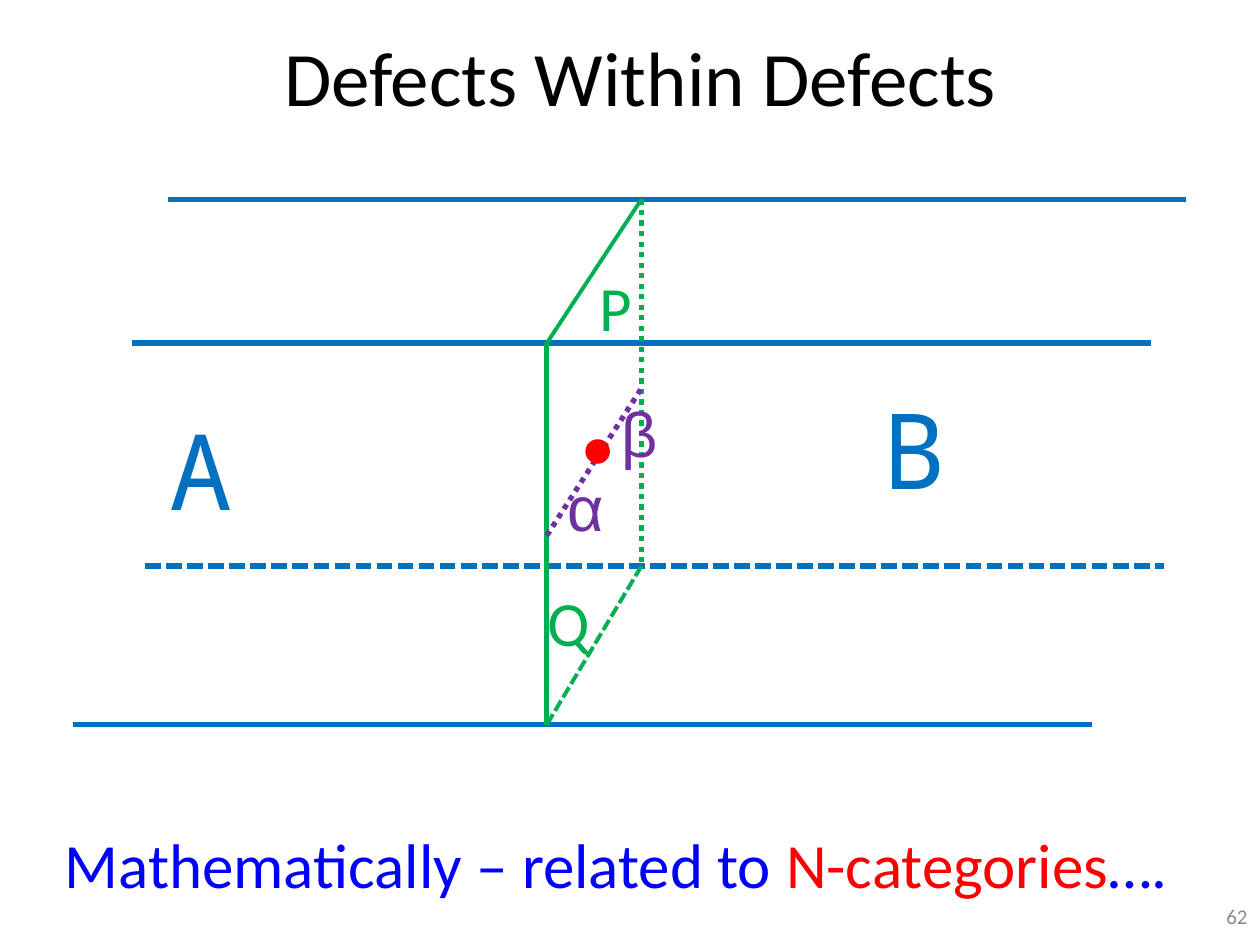
from dataclasses import dataclass

from pptx import Presentation
from pptx.dml.color import RGBColor
from pptx.enum.dml import MSO_LINE_DASH_STYLE as DASH
from pptx.enum.shapes import MSO_CONNECTOR, MSO_SHAPE
from pptx.enum.text import MSO_ANCHOR, PP_ALIGN
from pptx.oxml.ns import qn
from pptx.util import Pt


@dataclass(frozen=True)
class Theme:
    black: str = "000000"
    gray: str = "8C8C8C"
    sheet: str = "0070C0"
    wall: str = "00B050"
    seam: str = "7030A0"
    accent: str = "FF0000"
    note: str = "0000FF"
    title_size: int = 44
    region_size: int = 60
    label_size: int = 36
    number_size: int = 12
    font: str = "Calibri"
    greek_font: str = "Arial"
    region_font: str = "Noto Sans Mono"


T = Theme()


def write(sp, runs, size, font=T.font, align=PP_ALIGN.LEFT, anchor=MSO_ANCHOR.TOP):
    """Fill a shape with one paragraph of (text, colour) runs."""
    tf = sp.text_frame
    tf.word_wrap = True
    tf.vertical_anchor = anchor
    p = tf.paragraphs[0]
    p.alignment = align
    for text, color in runs:
        r = p.add_run()
        r.text = text
        r.font.size = Pt(size)
        r.font.name = font
        r.font.color.rgb = RGBColor.from_string(color)


def draw_line(start, end, color, width=3, dash=None):
    points = [Pt(v) for v in (*start, *end)]
    line = s.shapes.add_connector(MSO_CONNECTOR.STRAIGHT, *points)
    line.line.color.rgb = RGBColor.from_string(color)
    line.line.width = Pt(width)
    if dash:
        line.line.dash_style = dash
    sp_pr = line._element.spPr
    sp_pr.append(sp_pr.makeelement(qn("a:effectLst"), {}))


prs = Presentation()
prs.slide_width, prs.slide_height = Pt(720), Pt(540)
s = prs.slides.add_slide(prs.slide_layouts[5])

# Title
title = s.shapes.title
title.left, title.top, title.width, title.height = Pt(42), Pt(-1.5), Pt(648), Pt(90)
write(title, [("Defects Within Defects", T.black)], T.title_size,
      align=PP_ALIGN.CENTER, anchor=MSO_ANCHOR.MIDDLE)

# Corners of the wall between regions A and B
front_x, back_x = 312.5, 366.5
back_top, front_top, back_bottom, front_bottom = 114, 196, 323.5, 414

# Horizontal edges of the two sheets
edge_length = 582
for left, y, dash in [
    (96, back_top, None),
    (42, front_bottom, None),
    (75.5, front_top, None),
    (83, back_bottom, DASH.SQUARE_DOT),
]:
    draw_line((left, y), (left + edge_length, y), T.sheet, dash=dash)
# Pattern names: ROUND_DOT is sysDot, SQUARE_DOT is sysDash

# Wall outline
draw_line((back_x, back_top), (front_x, front_top), T.wall, 2.25)
draw_line((front_x, front_top), (front_x, front_bottom), T.wall)
draw_line((back_x, back_top), (back_x, back_bottom), T.wall, dash=DASH.ROUND_DOT)
draw_line((back_x, back_bottom), (front_x, front_bottom), T.wall, 2.25, DASH.SQUARE_DOT)

# Seam inside the wall, with its point defect
draw_line((front_x, 306), (back_x, 222), T.seam, dash=DASH.ROUND_DOT)
dot = s.shapes.add_shape(MSO_SHAPE.OVAL, Pt(335.5), Pt(252), Pt(12), Pt(12))
dot.shadow.inherit = False
dot.fill.solid()
dot.fill.fore_color.rgb = RGBColor.from_string(T.accent)
dot.line.color.rgb = RGBColor.from_string(T.accent)
dot.line.width = Pt(2)

# Labels and closing remark
remark = [("Mathematically – related to ", T.note), ("N-categories", T.accent),
          ("….", T.note)]
for runs, left, top, width, height, size, font in [
    ([("P", T.wall)], 335.5, 150, 132, 51, T.label_size, T.font),
    ([("Q", T.wall)], 306, 330, 144, 51, T.label_size, T.font),
    ([("α", T.seam)], 317.5, 264, 102, 51, T.label_size, T.greek_font),
    ([("β", T.seam)], 348, 222, 132, 51, T.label_size, T.greek_font),
    ([("A", T.sheet)], 90, 228, 114, 80, T.region_size, T.region_font),
    ([("B", T.sheet)], 497.5, 216, 138, 80, T.region_size, T.region_font),
    (remark, 30, 468, 654, 51, T.label_size, T.font),
]:
    box = s.shapes.add_textbox(Pt(left), Pt(top), Pt(width), Pt(height))
    write(box, runs, size, font)

# Slide number
number = s.shapes.add_textbox(Pt(552), Pt(509), Pt(168), Pt(29))
write(number, [("62", T.gray)], T.number_size,
      align=PP_ALIGN.RIGHT, anchor=MSO_ANCHOR.MIDDLE)

prs.save("out.pptx")
